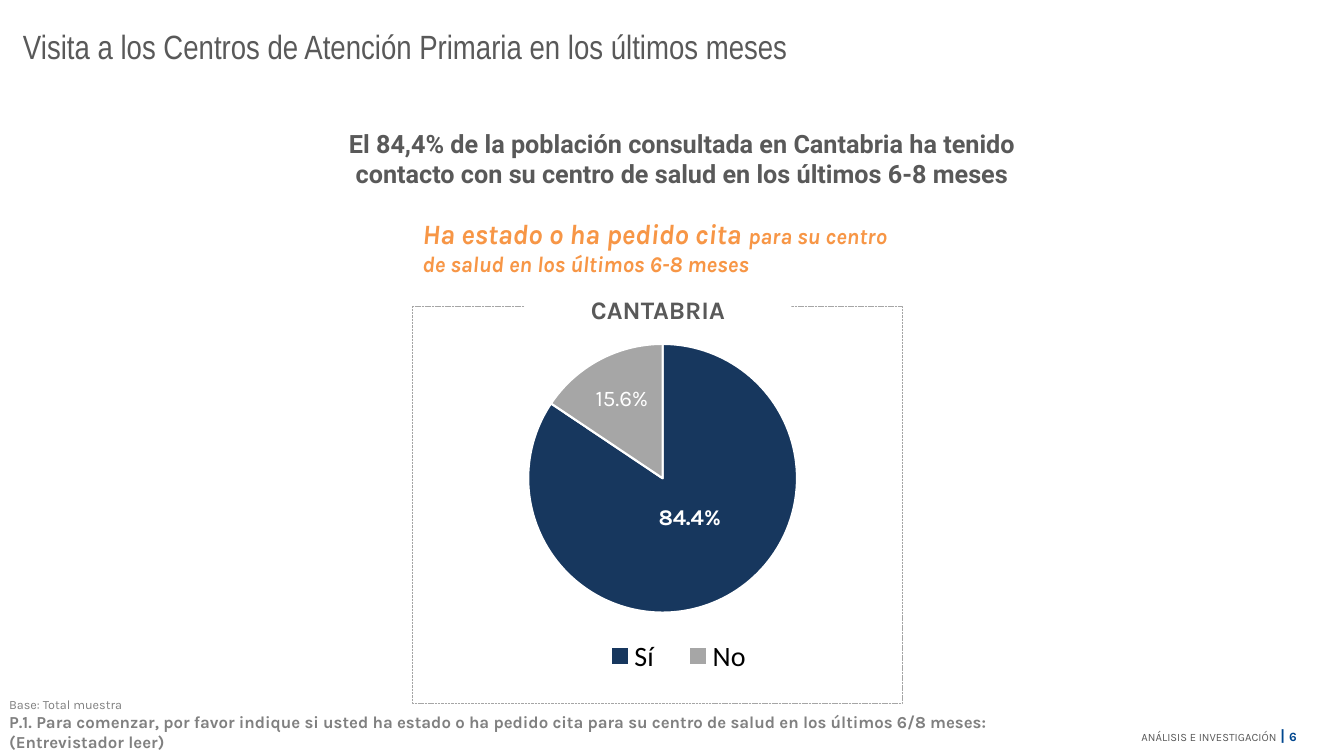
from lxml import etree
from pptx import Presentation
from pptx.chart.data import CategoryChartData
from pptx.dml.color import RGBColor
from pptx.enum.chart import XL_CHART_TYPE, XL_LABEL_POSITION, XL_LEGEND_POSITION
from pptx.enum.dml import MSO_LINE
from pptx.enum.shapes import MSO_SHAPE
from pptx.enum.text import MSO_ANCHOR, PP_ALIGN
from pptx.oxml.ns import qn
from pptx.util import Inches, Pt

PIE = XL_CHART_TYPE.PIE
BOTTOM = XL_LEGEND_POSITION.BOTTOM
MID_LABEL = XL_LABEL_POSITION.CENTER
DASH = MSO_LINE.SQUARE_DOT
RECT = MSO_SHAPE.RECTANGLE
TOP, MIDDLE, BASE = MSO_ANCHOR.TOP, MSO_ANCHOR.MIDDLE, MSO_ANCHOR.BOTTOM
LEFT, CENTER, RIGHT = PP_ALIGN.LEFT, PP_ALIGN.CENTER, PP_ALIGN.RIGHT

WHITE = RGBColor(0xFF, 0xFF, 0xFF)
BLACK = RGBColor(0, 0, 0)
DARK = RGBColor(0x59, 0x59, 0x59)
GRAY = RGBColor(0x80, 0x80, 0x80)
SILVER = RGBColor(0xA6, 0xA6, 0xA6)
ORANGE = RGBColor(0xF7, 0x96, 0x46)
NAVY = RGBColor(0x17, 0x37, 0x5E)
BLUE = RGBColor(0x00, 0x47, 0x8F)


class Page:
    def __init__(self, slide, face="Karla"):
        self.slide = slide
        self.face = face

    def style(self, font, size, color, bold=False, italic=False, face=None):
        font.name = face or self.face
        font.size = Pt(size)
        font.color.rgb = color
        font.bold = bold
        font.italic = italic

    def text(self, box, lines, align=LEFT, anchor=TOP, wrap=True, after=0,
             side=0.1, edge=0.05):
        shape = self.slide.shapes.add_textbox(*map(Inches, box))
        frame = shape.text_frame
        frame.word_wrap = wrap
        frame.vertical_anchor = anchor
        frame.margin_left = frame.margin_right = Inches(side)
        frame.margin_top = frame.margin_bottom = Inches(edge)
        for i, runs in enumerate(lines):
            para = frame.add_paragraph() if i else frame.paragraphs[0]
            para.alignment = align
            para.space_after = Pt(after)
            for words, look in runs:
                run = para.add_run()
                run.text = words
                if len(runs) > 1:
                    self.style(run.font, **look)
            if len(runs) == 1:
                self.style(para.font, **look)
        return shape

    def label(self, box, runs, **opts):
        shape = self.text(box, [runs], after=6, **opts)
        shape.fill.solid()
        shape.fill.fore_color.rgb = WHITE

    def frame(self, box):
        shape = self.slide.shapes.add_shape(RECT, *map(Inches, box))
        shape.shadow.inherit = False
        shape.fill.background()
        shape.line.color.rgb = SILVER
        shape.line.width = Pt(0.25)
        shape.line.dash_style = DASH

    def place(self, node, index, **spots):
        for old in node.findall(qn("c:layout")):
            node.remove(old)
        layout = etree.Element(qn("c:layout"))
        manual = etree.SubElement(layout, qn("c:manualLayout"))
        if "w" in spots:
            for key in ("xMode", "yMode"):
                etree.SubElement(manual, qn("c:" + key)).set("val", "edge")
        for key, value in spots.items():
            etree.SubElement(manual, qn("c:" + key)).set("val", str(value))
        node.insert(index, layout)

    def pie(self, box, name, slices):
        data = CategoryChartData(number_format="0.0\\%")
        data.categories = [part[0] for part in slices]
        data.add_series(name, [part[1] for part in slices])
        chart = self.slide.shapes.add_chart(PIE, *map(Inches, box), data).chart
        chart.has_title = False
        self.style(chart.font, 10, BLACK, face="Calibri")
        chart.has_legend = True
        legend = chart.legend
        legend.position = BOTTOM
        legend.include_in_layout = False
        self.style(legend.font, 20, BLACK, face="Calibri")
        self.place(legend._element, 1, x=0.34, y=0.82, w=0.38, h=0.12)
        plot = chart.plots[0]
        plot.vary_by_categories = True
        self.place(chart._chartSpace.chart.plotArea, 0,
                   x=0.2, y=0.09, w=0.59, h=0.68)
        plot.has_data_labels = True
        labels = plot.data_labels
        labels.show_value = True
        labels.show_percentage = False
        labels.number_format = "0.0\\%"
        labels.number_format_is_linked = False
        labels.position = MID_LABEL
        self.style(labels.font, 16, WHITE)
        for i, (_, _, color, bold, dx, dy) in enumerate(slices):
            point = plot.series[0].points[i]
            point.format.fill.solid()
            point.format.fill.fore_color.rgb = color
            point.format.line.color.rgb = WHITE
            point.format.line.width = Pt(1.5)
            tag = point.data_label
            self.style(tag.font, 16, WHITE, bold)
            tag.position = MID_LABEL
            self.place(tag._dLbl, 1, x=dx, y=dy)


def main():
    deck = Presentation()
    deck.slide_width, deck.slide_height = Inches(13.33), Inches(7.5)
    page = Page(deck.slides.add_slide(deck.slide_layouts[6]))

    page.text((11.05, 7.15, 1.91, 0.29), [[
        ("ANÁLISIS E INVESTIGACIÓN", dict(size=8, color=DARK)),
        (" ", dict(size=11, color=DARK)),
        ("| ", dict(size=11, color=BLUE, bold=True)),
        ("6", dict(size=9, color=BLUE, bold=True)),
    ]], align=RIGHT, anchor=MIDDLE, wrap=False)
    page.text((0.13, 0.21, 10.64, 0.91), [[
        ("Visita a los Centros de Atención Primaria en los últimos meses",
         dict(size=24, color=DARK, face="Arial Narrow")),
    ]])
    page.text((0, 7.06, 10.32, 0.44), [
        [("Base: Total muestra", dict(size=9, color=GRAY))],
        [("P.1. Para comenzar, por favor indique si usted ha estado o ha "
          "pedido cita para su centro de salud en los últimos 6/8 meses: "
          "(Entrevistador leer)", dict(size=12, color=GRAY, bold=True))],
    ], anchor=BASE, side=0.09, edge=0.04)
    accent = dict(color=ORANGE, bold=True, italic=True)
    page.label((4.09, 2.1, 4.86, 0.71), [
        ("Ha estado o ha pedido cita ", dict(size=20, **accent)),
        ("para su centro de salud en los últimos 6-8 meses",
         dict(size=16, **accent)),
    ])
    page.text((3.33, 1.06, 6.87, 1.02), [[
        ("El 84,4% de la población consultada en Cantabria ha tenido "
         "contacto con su centro de salud en los últimos 6-8 meses",
         dict(size=18, color=DARK, bold=True, face="Roboto")),
    ]], align=CENTER, anchor=MIDDLE, after=6)
    page.frame((4.09, 3.04, 4.86, 3.94))
    page.pie((4.32, 3.06, 4.55, 3.92), "Series 1", [
        ("Sí ", 84.4, NAVY, True, -0.01, -0.05),
        ("No", 15.6, SILVER, False, -0.02, -0.05),
    ])
    page.label((5.2, 2.81, 2.65, 0.53), [
        ("CANTABRIA", dict(size=18, color=DARK, bold=True)),
    ], align=CENTER, anchor=MIDDLE)
    deck.save("out.pptx")


if __name__ == "__main__":
    main()
